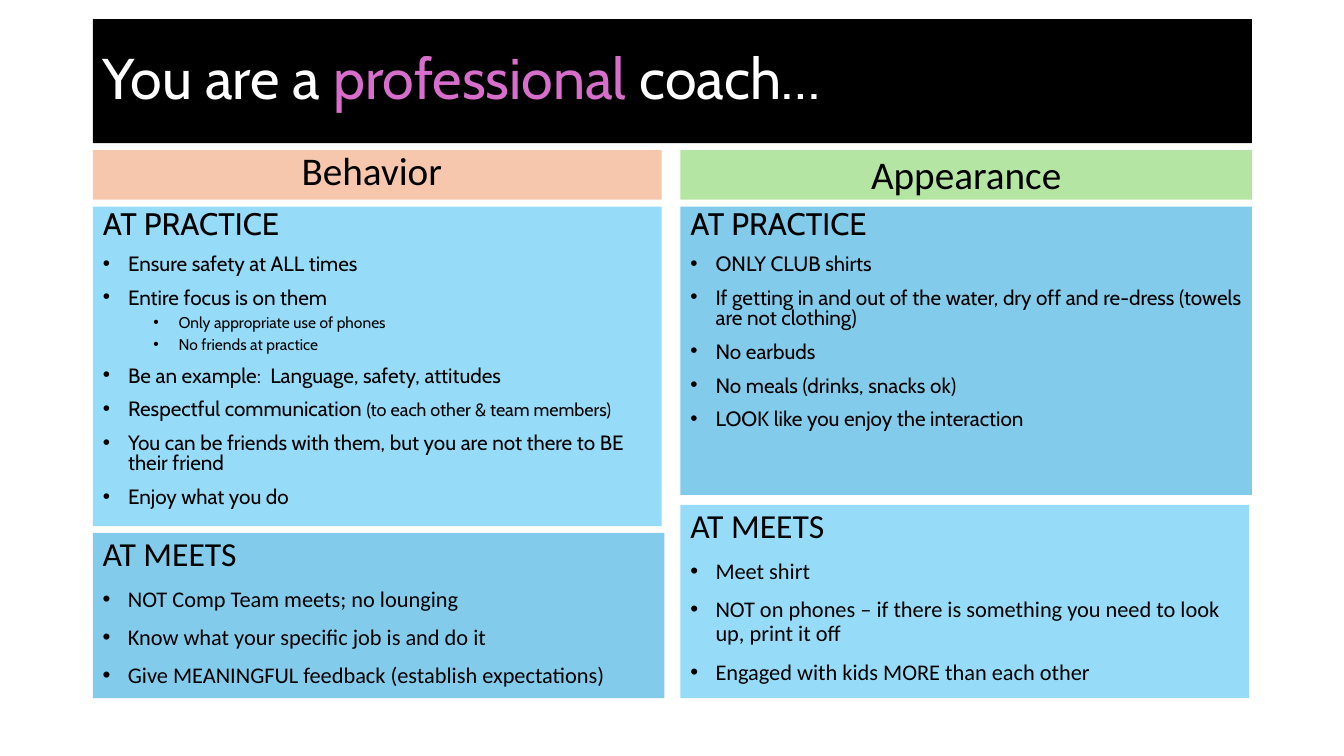
from collections import namedtuple
from dataclasses import dataclass

from pptx import Presentation
from pptx import util as u
from pptx.dml.color import RGBColor
from pptx.enum import shapes, text
from pptx.oxml.ns import qn
from lxml import etree


@dataclass(frozen=True)
class Theme:
    """Colours, fonts and type sizes of the slide."""
    black: str = "000000"
    white: str = "FFFFFF"
    accent: str = "D86ECC"
    peach: str = "F6C6AD"
    green: str = "B4E5A2"
    light_blue: str = "96DCF8"
    mid_blue: str = "83CBEB"
    title_font: str = "Cabin"
    plain_font: str = "Calibri"
    title_size: float = 41
    label_size: float = 28


THEME = Theme()
Box = namedtuple("Box", "left top width height")
Style = namedtuple("Style", "font heading item sub note spacing")
PRACTICE = Style(THEME.title_font, 22.2, 14.8, 11.1, 12.9, 0.8)
MEETS = Style(THEME.plain_font, 24, 16, 12, 14, 0.9)

LEFT, RIGHT = 66.3, 486
NARROW, WIDE = 406.3, 408.3
LABEL_TOP, LABEL_HEIGHT = 107.3, 35.3
PRACTICE_TOP = 147.6
BOTTOM = 498.7

BEHAVIOR_PRACTICE = [
    (0, "Ensure safety at ALL times"),
    (0, "Entire focus is on them"),
    (1, "Only appropriate use of phones"),
    (1, "No friends at practice"),
    (0, "Be an example:  Language, safety, attitudes"),
    (0, "Respectful communication ", "(to each other & team members)"),
    (0, "You can be friends with them, but you are not there to BE their friend"),
    (0, "Enjoy what you do"),
]
APPEARANCE_PRACTICE = [
    (0, "ONLY CLUB shirts"),
    (0, "If getting in and out of the water, dry off and re-dress (towels are not clothing)"),
    (0, "No earbuds"),
    (0, "No meals (drinks, snacks ok)"),
    (0, "LOOK like you enjoy the interaction"),
]
BEHAVIOR_MEETS = [
    (0, "NOT Comp Team meets; no lounging"),
    (0, "Know what your specific job is and do it"),
    (0, "Give MEANINGFUL feedback (establish expectations)"),
]
APPEARANCE_MEETS = [
    (0, "Meet shirt"),
    (0, "NOT on phones – if there is something you need to look up, print it off"),
    (0, "Engaged with kids MORE than each other"),
]


def place(shape, box, fill, anchor=text.MSO_ANCHOR.TOP):
    """Move a shape into its box, fill it and prepare its text frame."""
    shape.left, shape.top, shape.width, shape.height = map(u.Pt, box)
    shape.fill.solid()
    shape.fill.fore_color.rgb = RGBColor.from_string(fill)
    shape.line.fill.background()
    frame = shape.text_frame
    frame.word_wrap = True
    frame.auto_size = text.MSO_AUTO_SIZE.NONE
    frame.vertical_anchor = anchor
    return frame


def add_panel(page):
    """Add a plain rectangle without a shadow."""
    panel = page.shapes.add_shape(shapes.MSO_SHAPE.RECTANGLE, 0, 0, 0, 0)
    panel.shadow.inherit = False
    return panel


def format_span(span, font, size, color=THEME.black):
    """Set the font, size and colour of a run."""
    span.font.name = font
    span.font.size = u.Pt(size)
    span.font.bold = False
    span.font.color.rgb = RGBColor.from_string(color)


def format_para(para, spacing, before=0, align=text.PP_ALIGN.LEFT):
    """Set the spacing and alignment of a paragraph."""
    para.line_spacing = spacing
    para.space_before = u.Pt(before)
    para.alignment = align


def set_bullet(para, indent=None):
    """Give a paragraph a hanging bullet, or none without an indent."""
    props = para._p.get_or_add_pPr()
    props.set("marL", str(u.Pt(indent or 0)))
    props.set("indent", str(u.Pt(-18 if indent else 0)))
    if indent:
        etree.SubElement(props, qn("a:buFont")).set("typeface", "Arial")
        etree.SubElement(props, qn("a:buChar")).set("char", "•")
    else:
        etree.SubElement(props, qn("a:buNone"))


def draw_title(shape, box):
    """Fill the title band with its three-colour heading."""
    frame = place(shape, box, THEME.black, text.MSO_ANCHOR.MIDDLE)
    para = frame.paragraphs[0]
    format_para(para, 0.9)
    for words, color in (("You are a ", THEME.white), ("professional", THEME.accent),
                         (" coach…", THEME.white)):
        span = para.add_run()
        span.text = words
        format_span(span, THEME.title_font, THEME.title_size, color)


def draw_label(shape, box, words, fill, spacing):
    """Draw the centred label at the head of a column."""
    frame = place(shape, box, fill)
    frame.text = words
    para = frame.paragraphs[0]
    format_para(para, spacing, align=text.PP_ALIGN.CENTER)
    format_span(para.runs[0], THEME.plain_font, THEME.label_size)


def draw_list(shape, box, heading, items, fill, style):
    """Draw a panel with a heading and its bulleted items."""
    frame = place(shape, box, fill)
    frame.text = heading
    para = frame.paragraphs[0]
    set_bullet(para)
    format_para(para, style.spacing)
    format_span(para.runs[0], style.font, style.heading)
    for level, words, *notes in items:
        para = frame.add_paragraph()
        para.text = words
        para.level = level
        set_bullet(para, 54 if level else 18)
        format_para(para, style.spacing, 5 if level else 10)
        format_span(para.runs[0], style.font, style.sub if level else style.item)
        for note in notes:
            span = para.add_run()
            span.text = note
            format_span(span, style.font, style.note)


def main():
    """Build the slide and save it."""
    deck = Presentation()
    deck.slide_width, deck.slide_height = u.Pt(960), u.Pt(540)
    page = deck.slides.add_slide(deck.slide_layouts[3])
    title, behavior, appearance = page.placeholders
    draw_title(title, Box(LEFT, 13.6, 828, 88.6))
    draw_label(add_panel(page), Box(LEFT, LABEL_TOP, NARROW, LABEL_HEIGHT),
               "Behavior\t", THEME.peach, 0.8)
    draw_label(add_panel(page), Box(RIGHT, LABEL_TOP, WIDE, LABEL_HEIGHT),
               "Appearance", THEME.green, 0.9)
    draw_list(behavior, Box(LEFT, PRACTICE_TOP, NARROW, 228.2),
              "AT PRACTICE", BEHAVIOR_PRACTICE, THEME.light_blue, PRACTICE)
    draw_list(appearance, Box(RIGHT, PRACTICE_TOP, WIDE, 206),
              "AT PRACTICE", APPEARANCE_PRACTICE, THEME.mid_blue, PRACTICE)
    for left, width, height, items, fill in (
            (LEFT, WIDE, 118, BEHAVIOR_MEETS, THEME.mid_blue),
            (RIGHT, NARROW, 138, APPEARANCE_MEETS, THEME.light_blue)):
        draw_list(add_panel(page), Box(left, BOTTOM - height, width, height),
                  "AT MEETS", items, fill, MEETS)
    deck.save("out.pptx")


if __name__ == "__main__":
    main()
